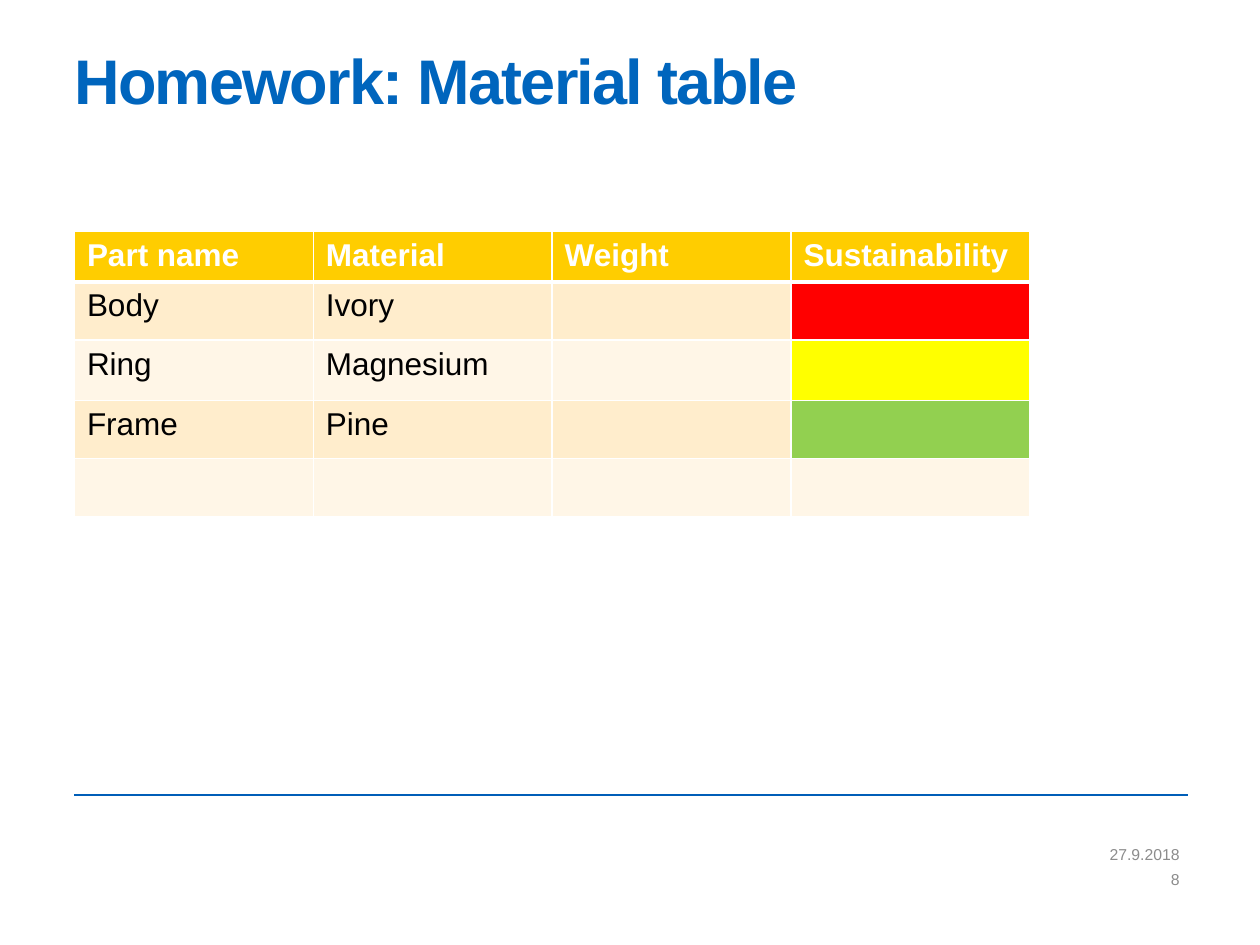
from lxml.etree import SubElement
from pptx import Presentation
from pptx.dml.color import RGBColor
from pptx.enum.shapes import MSO_CONNECTOR
from pptx.enum.text import MSO_ANCHOR, MSO_AUTO_SIZE, PP_ALIGN
from pptx.oxml.ns import qn
from pptx.util import Cm, Pt

COLORS = {
    "title": "0065BD",
    "rule": "005EB8",
    "footer": "8C8C8C",
    "header": "FFCD00",
    "band_dark": "FFEDCC",
    "band_light": "FFF6E7",
    "white": "FFFFFF",
    "black": "000000",
    "poor": "FF0000",
    "fair": "FFFF00",
    "good": "92D050",
}
LEFT = 1.5
CONTENT_WIDTH = 22.45
TABLE_WIDTH = 19.26
ROW_HEIGHTS = [0.99, 1.17, 1.22, 1.17, 1.17]
MATERIALS = [
    ["Part name", "Material", "Weight", "Sustainability"],
    ["Body", "Ivory", "", ""],
    ["Ring", "Magnesium", "", ""],
    ["Frame", "Pine", "", ""],
    ["", "", "", ""],
]
RATINGS = {1: "poor", 2: "fair", 3: "good"}


def color(name):
    """Return the named colour."""
    return RGBColor.from_string(COLORS[name])


def style_font(paragraph, size, color_name, bold=False):
    """Set the font of a whole paragraph."""
    font = paragraph.font
    font.name = "Arial"
    font.size = Pt(size)
    font.bold = bold
    font.color.rgb = color(color_name)


def add_title(page, text):
    """Fill and place the title placeholder."""
    title = page.shapes.title
    title.left, title.top = Cm(LEFT), Cm(1.07)
    title.width, title.height = Cm(CONTENT_WIDTH), Cm(3.33)
    frame = title.text_frame
    frame.auto_size = MSO_AUTO_SIZE.NONE
    frame.vertical_anchor = MSO_ANCHOR.TOP
    frame.margin_left = frame.margin_top = frame.margin_right = frame.margin_bottom = 0
    paragraph = frame.paragraphs[0]
    paragraph.alignment = PP_ALIGN.LEFT
    paragraph.line_spacing = 0.85
    span = paragraph.add_run()
    span.text = text
    span.font._element.set("spc", "-100")
    style_font(paragraph, 36, "title", bold=True)


def add_rule(page, top):
    """Draw the thin line above the footer."""
    rule = page.shapes.add_connector(
        MSO_CONNECTOR.STRAIGHT, Cm(LEFT), Cm(top), Cm(LEFT + CONTENT_WIDTH), Cm(top)
    )
    rule.line.color.rgb = color("rule")
    rule.line.width = Pt(1)
    SubElement(rule._element.spPr, qn("a:effectLst"))


def add_footer(page, text, top, height):
    """Add a right-aligned footer line."""
    box = page.shapes.add_textbox(Cm(13.72), Cm(top), Cm(10.06), Cm(height))
    frame = box.text_frame
    frame.word_wrap = True
    frame.vertical_anchor = MSO_ANCHOR.MIDDLE
    frame.margin_right = 0
    paragraph = frame.paragraphs[0]
    paragraph.text = text
    paragraph.alignment = PP_ALIGN.RIGHT
    style_font(paragraph, 9, "footer")


def set_borders(cell, bottom_width, top_width):
    """Give a cell white borders."""
    properties = cell._tc.get_or_add_tcPr()
    widths = {"lnL": 1, "lnR": 1, "lnT": top_width, "lnB": bottom_width}
    for position, (side, width) in enumerate(widths.items()):
        line = SubElement(properties, qn(f"a:{side}"), w=str(Pt(width)))
        fill = SubElement(line, qn("a:solidFill"))
        SubElement(fill, qn("a:srgbClr"), val=COLORS["white"])
        properties.insert(position, line)


def fill_name(row, column):
    """Choose the fill of a table cell."""
    if row == 0:
        return "header"
    if column == 3 and row in RATINGS:
        return RATINGS[row]
    return "band_dark" if row % 2 else "band_light"


def add_material_table(page):
    """Add the table of parts and materials."""
    column_count = len(MATERIALS[0])
    table = page.shapes.add_table(
        len(MATERIALS), column_count, Cm(LEFT), Cm(4.67),
        Cm(TABLE_WIDTH), Cm(sum(ROW_HEIGHTS)),
    ).table
    for column in table.columns:
        column.width = Cm(TABLE_WIDTH / column_count)
    for row, (texts, height) in enumerate(zip(MATERIALS, ROW_HEIGHTS)):
        table.rows[row].height = Cm(height)
        is_header = row == 0
        for column, text in enumerate(texts):
            cell = table.cell(row, column)
            cell.fill.solid()
            cell.fill.fore_color.rgb = color(fill_name(row, column))
            set_borders(cell, 3 if is_header else 1, 3 if row == 1 else 1)
            paragraph = cell.text_frame.paragraphs[0]
            paragraph.text = text
            style_font(paragraph, 18, "white" if is_header else "black", is_header)


def main():
    """Build and save the deck."""
    deck = Presentation()
    deck.slide_width, deck.slide_height = Cm(25.4), Cm(19.05)
    page = deck.slides.add_slide(deck.slide_layouts[5])
    add_rule(page, 16.03)
    add_title(page, "Homework: Material table")
    add_footer(page, "27.9.2018", 16.97, 0.51)
    add_footer(page, "8", 17.5, 0.46)
    add_material_table(page)
    deck.save("out.pptx")


if __name__ == "__main__":
    main()
